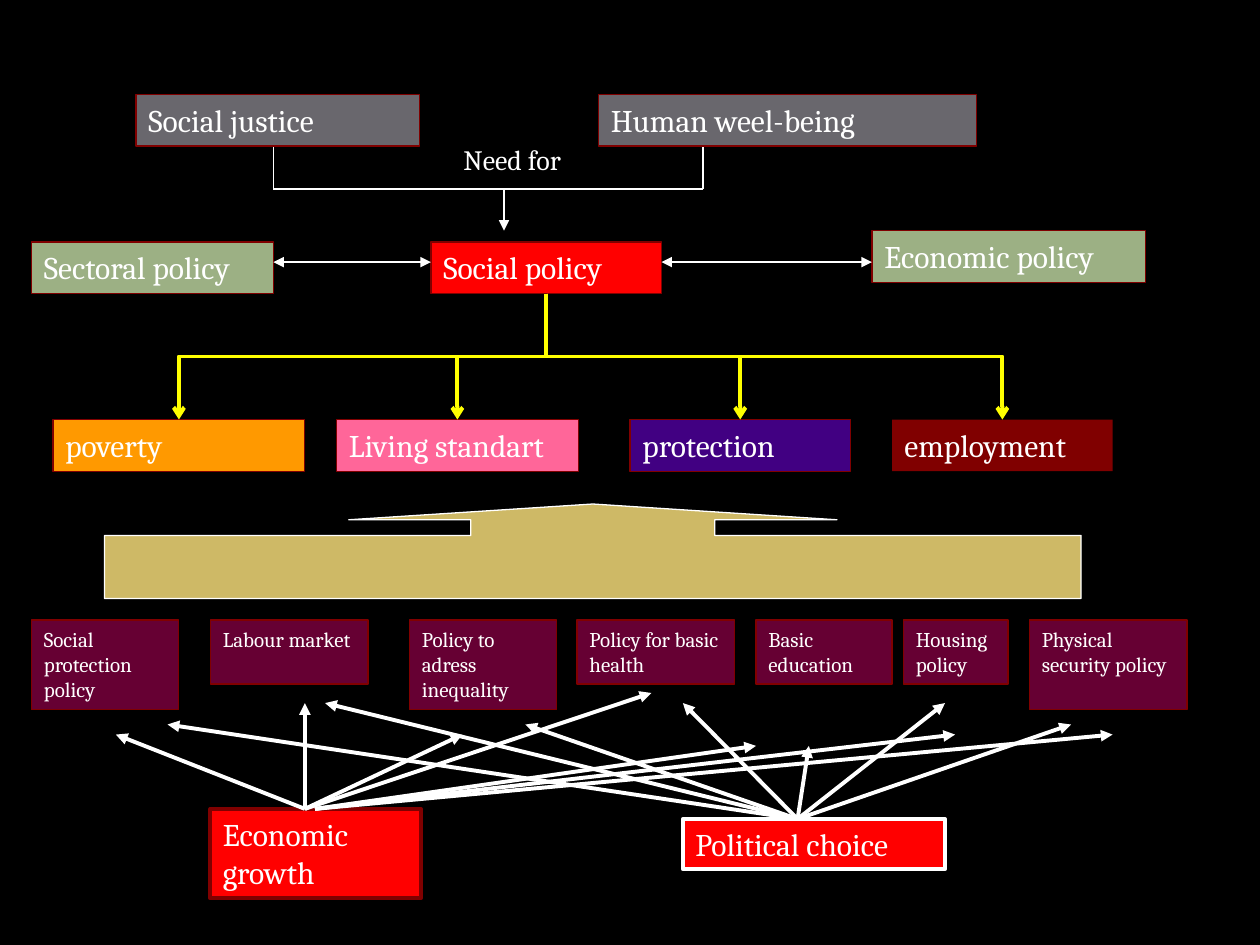
import pptx
import pptx.dml.color
import pptx.enum.shapes
import pptx.enum.text
import pptx.oxml.ns
import pptx.util
from lxml import etree
from pptx.util import Inches

SHAPES = pptx.enum.shapes.MSO_SHAPE
CONNECTORS = pptx.enum.shapes.MSO_CONNECTOR
qn = pptx.oxml.ns.qn

THEME = {
    "font": "Cambria", "large": 18, "label": 16, "small": 12,
    "thin": 0.75, "thick": 2.25,
    "background": "000000", "white": "FFFFFF", "border": "800000",
    "grey": "69676D", "green": "9CB084", "red": "FF0000", "yellow": "FFFF00",
    "orange": "FF9900", "pink": "FF6699", "violet": "410082",
    "maroon": "800000", "plum": "660033", "sand": "CEB966",
}


def color(name):
    return pptx.dml.color.RGBColor.from_string(THEME[name])


def add_text(text, left, top, width, height, fill=None, border="border",
             weight="thin", size="large"):
    """Add a filled rectangle with text, or a bare text box without a fill."""
    place = [Inches(value) for value in (left, top, width, height)]
    if fill:
        box = page.shapes.add_shape(SHAPES.RECTANGLE, *place)
        box.shadow.inherit = False
        box.fill.solid()
        box.fill.fore_color.rgb = color(fill)
        if border:
            box.line.color.rgb = color(border)
            box.line.width = pptx.util.Pt(THEME[weight])
        else:
            box.line.fill.background()
    else:
        box = page.shapes.add_textbox(*place)
    frame = box.text_frame
    frame.word_wrap = True
    frame.auto_size = pptx.enum.text.MSO_AUTO_SIZE.SHAPE_TO_FIT_TEXT
    frame.vertical_anchor = pptx.enum.text.MSO_ANCHOR.TOP
    para = frame.paragraphs[0]
    para.alignment = pptx.enum.text.PP_ALIGN.LEFT
    span = para.add_run()
    span.text = text
    span.font.name = THEME["font"]
    span.font.size = pptx.util.Pt(THEME[size])
    span.font.color.rgb = color("white")
    return box


def add_line(start, end, ink="white", weight="thin", head=None, tail=None,
             kind=CONNECTORS.STRAIGHT):
    ends = [Inches(value) for value in (*start, *end)]
    line = page.shapes.add_connector(kind, *ends)
    line.line.color.rgb = color(ink)
    line.line.width = pptx.util.Pt(THEME[weight])
    properties = line._element.spPr
    for tag, arrow in (("a:headEnd", head), ("a:tailEnd", tail)):
        if arrow:
            etree.SubElement(properties.find(qn("a:ln")), qn(tag), type=arrow)
    etree.SubElement(properties, qn("a:effectLst"))
    return line


deck = pptx.Presentation()
deck.slide_width, deck.slide_height = Inches(10), Inches(7.5)
page = deck.slides.add_slide(deck.slide_layouts[6])
page.background.fill.solid()
page.background.fill.fore_color.rgb = color("background")

# Goals and the policy they call for
add_text("Social justice", 1.08, 0.75, 2.25, 0.41, "grey")
add_text("Human weel-being", 4.75, 0.75, 3, 0.41, "grey")
social_policy = add_text("Social policy", 3.42, 1.92, 1.83, 0.41, "red")

# Four areas of social policy
areas = []
for text, left, width, fill, border in (
    ("poverty", 0.42, 2, "orange", "border"),
    ("Living standart", 2.67, 1.92, "pink", "border"),
    ("protection", 5, 1.75, "violet", "border"),
    ("employment", 7.08, 1.75, "maroon", None),
):
    areas.append(add_text(text, left, 3.33, width, 0.41, fill, border))

# Policy instruments
for text, left, width, height in (
    ("Social protection policy", 0.25, 1.17, 0.71),
    ("Labour market", 1.67, 1.25, 0.51),
    ("Policy to adress inequality", 3.25, 1.17, 0.71),
    ("Policy for basic health", 4.58, 1.25, 0.51),
    ("Basic education", 6, 1.08, 0.51),
    ("Housing policy", 7.17, 0.83, 0.51),
    ("Physical security policy", 8.17, 1.25, 0.71),
):
    add_text(text, left, 4.92, width, height, "plum", size="small")

# Bracket from the goals down to social policy
bracket = [(2.17, 1.17), (2.17, 1.5), (5.58, 1.5), (5.58, 1.17)]
for start, end in zip(bracket, bracket[1:]):
    add_line(start, end)
add_line((4, 1.5), (4, 1.83), tail="triangle")

callout = page.shapes.add_shape(SHAPES.UP_ARROW_CALLOUT, Inches(0.83), Inches(4),
                                Inches(7.75), Inches(0.75))
for index, value in enumerate((2.583, 2.583, 0.167, 0.667)):
    callout.adjustments[index] = value
callout.shadow.inherit = False
callout.fill.solid()
callout.fill.fore_color.rgb = color("sand")
callout.line.color.rgb = color("white")
callout.line.width = pptx.util.Pt(THEME["thin"])

# Driving forces and their arrows to the instruments
add_text("Economic growth", 1.67, 6.42, 1.67, 0.71, "red", weight="thick")
add_text("Political choice", 5.42, 6.5, 2.08, 0.4, "red", "white", "thick")
for start, targets in (
    ((2.42, 6.42), [(0.92, 5.83), (2.42, 5.58), (3.67, 5.83), (5.17, 5.5)]),
    ((2.5, 6.42), [(6, 5.92), (7.58, 5.83), (8.83, 5.83)]),
    ((6.33, 6.5), [(1.33, 5.75), (2.58, 5.58), (4.17, 5.75), (5.42, 5.58),
                   (6.42, 5.92), (7.5, 5.58), (8.5, 5.75)]),
):
    for target in targets:
        add_line(start, target, weight="thick", tail="triangle")

# Neighbouring policies
add_text("Economic policy", 6.92, 1.83, 2.17, 0.41, "green")
add_text("Sectoral policy", 0.25, 1.92, 1.92, 0.41, "green")
for start, end in ((5.25, 6.92), (2.17, 3.42)):
    add_line((start, 2.08), (end, 2.08), head="triangle", tail="triangle")
add_text("Need for", 3.58, 1.08, 1.17, 0.37, size="label")

# Elbows leave social policy downwards, so each one is turned by a quarter
start_x = social_policy.left + social_policy.width // 2
start_y = social_policy.top + social_policy.height
for area in areas:
    elbow = add_line((0, 0), (1, 1), "yellow", "thick", tail="arrow",
                     kind=CONNECTORS.ELBOW)
    elbow.begin_connect(social_policy, 2)
    elbow.end_connect(area, 0)
    end_x = area.left + area.width // 2
    drop, reach = area.top - start_y, abs(end_x - start_x)
    elbow.left = (start_x + end_x - drop) // 2
    elbow.top = (start_y + area.top - reach) // 2
    elbow.width, elbow.height = drop, reach
    frame = elbow._element.spPr.find(qn("a:xfrm"))
    for flip in ("flipH", "flipV"):
        frame.attrib.pop(flip, None)
    if end_x < start_x:
        frame.set("rot", "5400000")
    else:
        frame.set("rot", "16200000")
        frame.set("flipH", "1")

deck.save("out.pptx")
